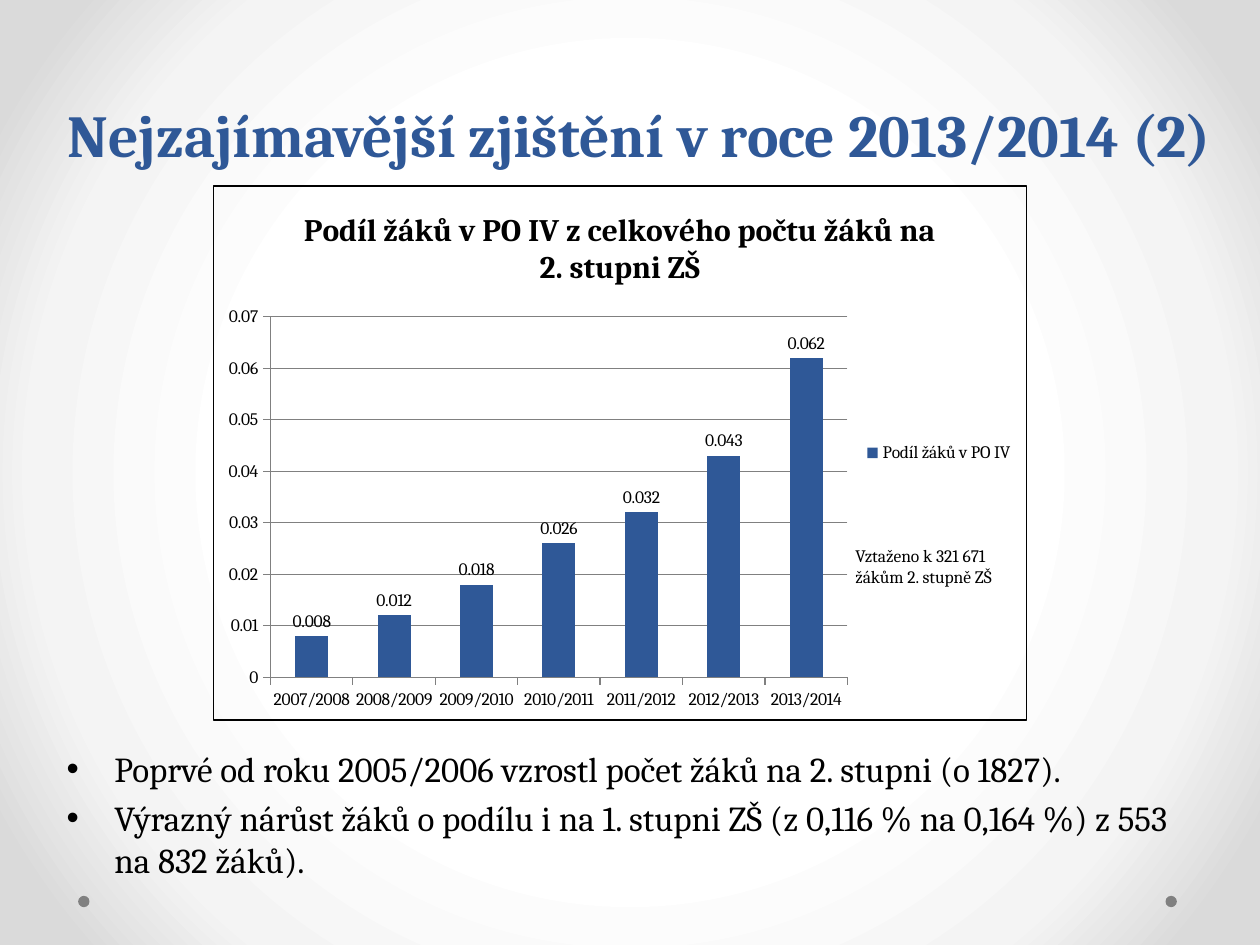
import pptx
import pptx.chart.data
import pptx.dml.color
import pptx.enum.chart
import pptx.enum.shapes
import pptx.enum.text
import pptx.oxml
import pptx.oxml.ns
import pptx.util

RGB = pptx.dml.color.RGBColor
BLUE = RGB(0x2F, 0x58, 0x97)
BLACK = RGB(0, 0, 0)
GREY = RGB(0x80, 0x80, 0x80)
FACE = "Cambria"
WIDE, HIGH = 10, 7.5
STOPS = [(50, "FFFFFF"), (76, "F4F4F4"), (92, "DADADA")]

YEARS = [f"{y}/{y + 1}" for y in range(2007, 2014)]
SHARES = [0.008, 0.012, 0.018, 0.026, 0.032, 0.043, 0.062]
POINTS = [
    "Poprvé od roku 2005/2006 vzrostl počet žáků na 2. stupni (o 1827).",
    "Výrazný nárůst žáků o podílu i na 1. stupni ZŠ (z 0,116 % na 0,164 %) z 553 na 832 žáků).",
]


def inch(box):
    return [pptx.util.Inches(n) for n in box]


def node(xml):
    return pptx.oxml.parse_xml(xml.replace(">", " " + pptx.oxml.ns.nsdecls("a", "c") + ">", 1))


def style(font, size, color=BLACK, bold=False):
    font.name, font.size, font.bold = FACE, pptx.util.Pt(size), bold
    font.color.rgb = color


def write(slide, box, lines, size, color=BLACK, bold=False):
    """Add a wrapped text box with one paragraph a line; return its frame."""
    frame = slide.shapes.add_textbox(*inch(box)).text_frame
    frame.word_wrap = True
    frame.text = "\n".join(lines)
    for para in frame.paragraphs:
        style(para.font, size, color, bold)
    return frame


def backdrop(slide):
    """Fill the slide with a round gradient and set a dot in each low corner."""
    slide.background.fill.gradient()
    old = next(slide.element.iter(pptx.oxml.ns.qn("a:gradFill")))
    stops = "".join(
        f'<a:gs pos="{at * 1000}"><a:srgbClr val="{tint}"/></a:gs>' for at, tint in STOPS
    )
    old.getparent().replace(old, node(
        f'<a:gradFill rotWithShape="1"><a:gsLst>{stops}</a:gsLst><a:path path="circle">'
        '<a:fillToRect l="50000" t="50000" r="50000" b="50000"/></a:path></a:gradFill>'
    ))
    for left in (0.62, 9.25):
        dot = slide.shapes.add_shape(
            pptx.enum.shapes.MSO_SHAPE.OVAL, *inch((left, 7.11, 0.09, 0.09))
        )
        dot.shadow.inherit = False
        dot.fill.solid()
        dot.fill.fore_color.rgb = GREY
        dot.line.fill.background()


def heading(slide, box):
    frame = write(slide, box, ["Nejzajímavější zjištění v roce 2013/2014 (2)"], 34, BLUE, True)
    frame.vertical_anchor = pptx.enum.text.MSO_ANCHOR.BOTTOM
    frame.paragraphs[0].alignment = pptx.enum.text.PP_ALIGN.CENTER


def bullets(slide, box):
    for para in write(slide, box, POINTS, 20).paragraphs:
        para.space_before = pptx.util.Pt(4)
        props = para._p.get_or_add_pPr()
        hang = pptx.util.Inches(0.38)
        props.set("marL", str(hang))
        props.set("indent", str(-hang))
        props.append(node('<a:buFont typeface="Arial"/>'.replace("/>", "></a:buFont>")))
        props.append(node('<a:buChar char="•"></a:buChar>'))


def axis(part):
    part.major_tick_mark = pptx.enum.chart.XL_TICK_MARK.OUTSIDE
    part.format.line.color.rgb = GREY
    style(part.tick_labels.font, 10)


def graph(slide, box):
    """Column chart in the box, with its remark under the legend."""
    data = pptx.chart.data.CategoryChartData()
    data.categories = YEARS
    data.add_series("Podíl žáků v PO IV", SHARES)
    kind = pptx.enum.chart.XL_CHART_TYPE.COLUMN_CLUSTERED
    chart = slide.shapes.add_chart(kind, *inch(box), data).chart
    style(chart.font, 10)

    title = chart.chart_title.text_frame
    title.text = "Podíl žáků v PO IV z celkového počtu žáků na 2. stupni ZŠ"
    style(title.paragraphs[0].font, 18, bold=True)
    chart.has_legend = True
    chart.legend.position = pptx.enum.chart.XL_LEGEND_POSITION.RIGHT
    chart.legend.include_in_layout = False
    style(chart.legend.font, 10)

    axis(chart.category_axis)
    rise = chart.value_axis
    axis(rise)
    rise.minimum_scale, rise.maximum_scale, rise.major_unit = 0, 0.07, 0.01
    rise.major_gridlines.format.line.color.rgb = GREY

    plot = chart.plots[0]
    plot.gap_width = 150
    plot.vary_by_categories = False
    bars = plot.series[0].format.fill
    bars.solid()
    bars.fore_color.rgb = BLUE
    plot.has_data_labels = True
    tags = plot.data_labels
    tags.show_value = True
    tags.position = pptx.enum.chart.XL_LABEL_POSITION.OUTSIDE_END
    style(tags.font, 10)

    area = next(chart.element.iter(pptx.oxml.ns.qn("c:plotArea")))
    for old in area.findall(pptx.oxml.ns.qn("c:layout")):
        area.remove(old)
    spots = "".join(
        f'<c:{key} val="{val}"/>'
        for key, val in [("layoutTarget", "inner"), ("xMode", "edge"), ("yMode", "edge"),
                         ("x", 0.07), ("y", 0.245), ("w", 0.71), ("h", 0.675)]
    )
    area.insert(0, node(f"<c:layout><c:manualLayout>{spots}</c:manualLayout></c:layout>"))
    chart.element.find(pptx.oxml.ns.qn("c:chart")).addnext(node(
        '<c:spPr><a:noFill/><a:ln w="9525"><a:solidFill>'
        f'<a:srgbClr val="{BLACK}"/></a:solidFill></a:ln></c:spPr>'
    ))

    left, top, wide, high = box
    spot = (left + 0.774 * wide, top + 0.661 * high, 1.57, 0.44)
    write(slide, spot, ["Vztaženo k 321 671 žákům 2. stupně ZŠ"], 10)


def main():
    deck = pptx.Presentation()
    deck.slide_width, deck.slide_height = inch((WIDE, HIGH))
    slide = deck.slides.add_slide(deck.slide_layouts[6])
    backdrop(slide)
    heading(slide, (0.35, 0.6, 9.45, 0.79))
    bullets(slide, (0.43, 5.88, 9.13, 1.1))
    graph(slide, (1.69, 1.47, 6.46, 4.25))
    deck.save("out.pptx")


if __name__ == "__main__":
    main()
